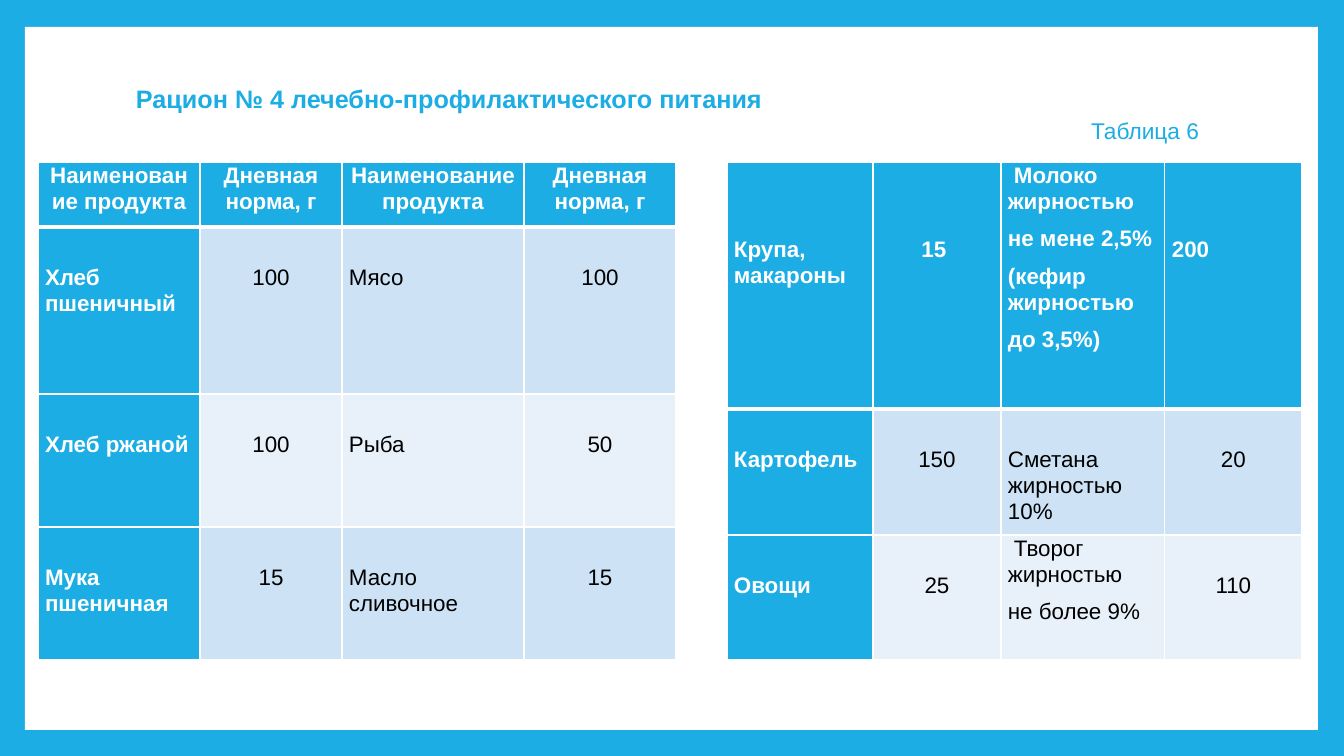
from dataclasses import dataclass

from lxml.etree import SubElement
from pptx import Presentation
from pptx.dml.color import RGBColor
from pptx.enum.shapes import MSO_SHAPE as Shape
from pptx.enum.text import MSO_ANCHOR as Anchor, MSO_AUTO_SIZE as AutoSize, PP_ALIGN as Align
from pptx.oxml.ns import qn
from pptx.util import Emu, Pt

EMU_PER_PX = 914400 / 100.8
ALIGNMENTS = {"l": Align.LEFT, "c": Align.CENTER, "r": Align.RIGHT}


def px(length):
    return Emu(round(length * EMU_PER_PX))


def assign(target, values):
    for name, value in values.items():
        setattr(target, name, value)


@dataclass(frozen=True)
class Theme:
    font: str = "Arial"
    accent: str = "1CADE4"
    light: str = "FFFFFF"
    dark: str = "000000"
    bands: tuple = ("CDE3F5", "E8F1FA")
    title_size: float = 18
    caption_size: float = 16.2
    cell_size: float = 16
    thin: float = 1
    thick: float = 3


class SlideBuilder:
    def __init__(self, deck, theme):
        self.theme = theme
        self.page = deck.slides.add_slide(deck.slide_layouts[5])
        self.paint(self.page.background.fill, theme.accent)

    def paint(self, fill, color):
        fill.solid()
        fill.fore_color.rgb = RGBColor.from_string(color)

    def fill_para(self, para, text, size, color, bold, align, after=8):
        assign(para, {"alignment": ALIGNMENTS[align], "line_spacing": 1.05,
                      "space_before": Pt(0), "space_after": Pt(after)})
        span = para.add_run()
        span.text = text
        assign(span.font, {"name": self.theme.font, "size": Pt(size), "bold": bold})
        span.font.color.rgb = RGBColor.from_string(color)

    def panel(self, left, top, width, height):
        box = self.page.shapes.add_shape(Shape.RECTANGLE, *map(px, (left, top, width, height)))
        box.shadow.inherit = False
        self.paint(box.fill, self.theme.light)
        box.line.fill.background()

    def title(self, left, top, width, height, heading, caption):
        theme = self.theme
        box = self.page.shapes.title
        self.page.shapes._spTree.append(box._element)
        assign(box, {"left": px(left), "top": px(top), "width": px(width), "height": px(height)})
        frame = box.text_frame
        assign(frame, {"word_wrap": True, "auto_size": AutoSize.NONE, "vertical_anchor": Anchor.TOP,
                       "margin_left": px(10), "margin_right": px(16), "margin_top": px(15)})
        self.fill_para(frame.paragraphs[0], heading, theme.title_size, theme.accent, True, "l", 1)
        self.fill_para(frame.add_paragraph(), caption, theme.caption_size, theme.accent, False, "r", 0)

    def borders(self, cell, row):
        theme = self.theme
        widths = {"lnL": theme.thin, "lnR": theme.thin,
                  "lnT": theme.thick if row == 1 else theme.thin,
                  "lnB": theme.thick if row == 0 else theme.thin}
        properties = cell._tc.get_or_add_tcPr()
        for side, width in widths.items():
            line = SubElement(properties, qn(f"a:{side}"), w=str(Pt(width)))
            fill = SubElement(line, qn("a:solidFill"))
            SubElement(fill, qn("a:srgbClr"), val=theme.light)

    def cell(self, cell, row, column, text, lead, align):
        theme = self.theme
        strong = row == 0 or column == 0
        lines = text.split("\n")
        stacked = len(lines) > 1
        assign(cell, {"margin_left": px(7), "margin_right": px(7), "margin_bottom": px(0),
                      "margin_top": px(0 if stacked else lead), "vertical_anchor": Anchor.TOP})
        self.borders(cell, row)
        self.paint(cell.fill, theme.accent if strong else theme.bands[(row - 1) % 2])
        frame = cell.text_frame
        for index, line in enumerate(lines):
            para = frame.add_paragraph() if index else frame.paragraphs[0]
            self.fill_para(para, line, theme.cell_size, theme.light if strong else theme.dark, strong, align)
        if stacked:
            frame.paragraphs[0]._p.get_or_add_pPr().set("indent", str(px(6)))

    def table(self, left, top, widths, rows):
        heights = [height for height, *_ in rows]
        frame = self.page.shapes.add_table(len(rows), len(widths), px(left), px(top),
                                           px(sum(widths)), px(sum(heights)))
        grid = frame.table
        for column, width in zip(grid.columns, widths):
            column.width = px(width)
        for row, (height, lead, aligns, texts) in enumerate(rows):
            grid.rows[row].height = px(height)
            for column, (text, align) in enumerate(zip(texts, aligns)):
                self.cell(grid.cell(row, column), row, column, text, lead, align)


def main():
    deck = Presentation()
    assign(deck, {"slide_width": px(1344), "slide_height": px(756)})
    slide = SlideBuilder(deck, Theme())
    slide.panel(25, 27, 1293, 703)
    slide.title(126, 67, 1089, 149, "Рацион № 4 лечебно-профилактического питания", "Таблица 6")
    slide.table(38, 162, (162, 142, 182, 152), [
        (65, 0, "cccc", ("Наименование продукта", "Дневная норма, г") * 2),
        (167, 37, "lclc", ("Хлеб пшеничный", "100", "Мясо", "100")),
        (133, 37, "lclc", ("Хлеб ржаной", "100", "Рыба", "50")),
        (133, 37, "lclc", ("Мука пшеничная", "15", "Масло сливочное", "15")),
    ])
    slide.table(727, 162, (146, 128, 164, 137), [
        (247, 74, "lcll", ("Крупа, макароны", "15 ",
                           "Молоко жирностью\nне мене 2,5%\n(кефир жирностью\nдо 3,5%)", "200")),
        (126, 37, "lclc", ("Картофель", "150", "Сметана жирностью 10%", "20")),
        (125, 37, "lclc", ("Овощи", "25", "Творог жирностью\nне более 9%", "110")),
    ])
    deck.save("out.pptx")


if __name__ == "__main__":
    main()
